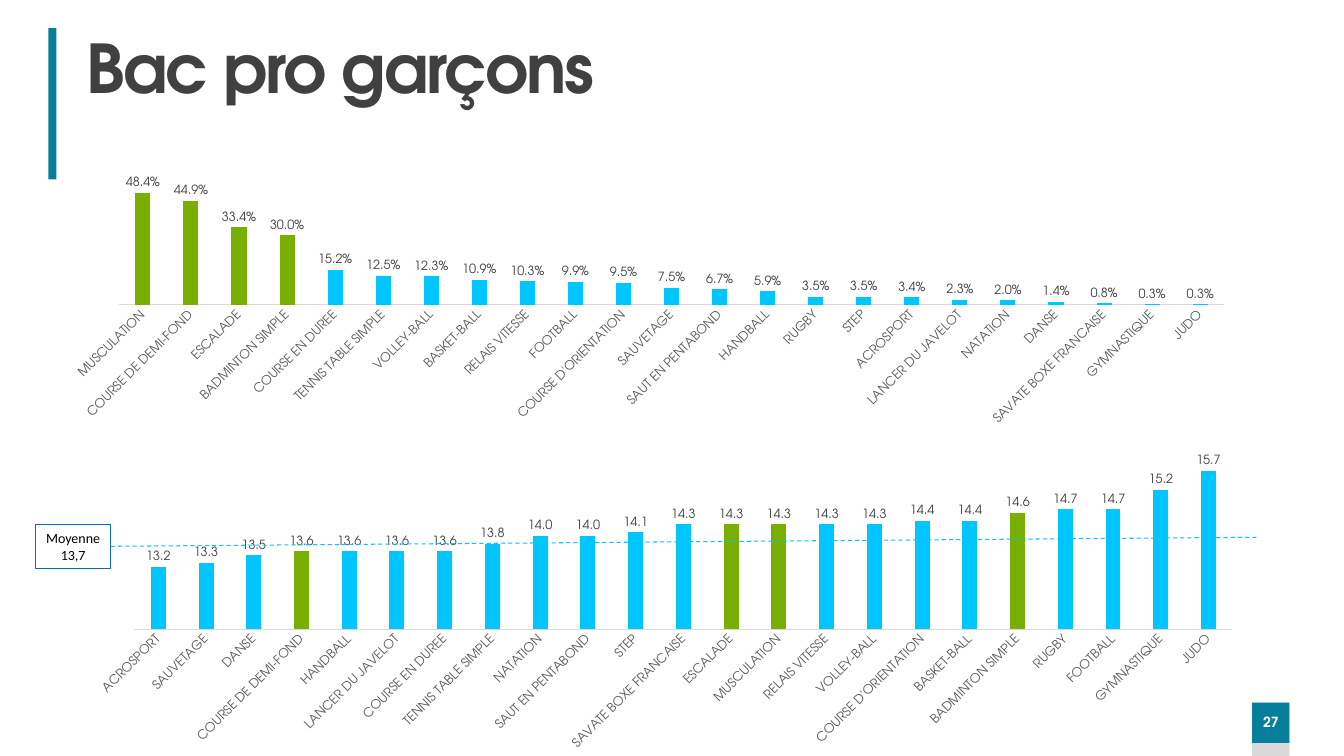
from lxml import etree
from pptx import Presentation
from pptx.chart.data import CategoryChartData
from pptx.dml.color import RGBColor
from pptx.enum.chart import XL_CHART_TYPE, XL_LABEL_POSITION, XL_TICK_MARK
from pptx.enum.dml import MSO_LINE
from pptx.enum.shapes import MSO_CONNECTOR, MSO_SHAPE
from pptx.enum.text import MSO_ANCHOR, PP_ALIGN
from pptx.oxml import parse_xml
from pptx.oxml.ns import nsdecls, qn
from pptx.util import Inches, Pt

COLUMN = XL_CHART_TYPE.COLUMN_CLUSTERED
OUTSIDE = XL_LABEL_POSITION.OUTSIDE_END
NO_TICK = XL_TICK_MARK.NONE
DASH = MSO_LINE.DASH
STRAIGHT = MSO_CONNECTOR.STRAIGHT
RECT = MSO_SHAPE.RECTANGLE
MIDDLE = MSO_ANCHOR.MIDDLE
LEFT, CENTER = PP_ALIGN.LEFT, PP_ALIGN.CENTER

# Content
TITLE = "Bac pro garçons"
PAGE = "27"
MEAN = "Moyenne 13,7"
SHARES = [
    ("MUSCULATION", 0.484), ("COURSE DE DEMI-FOND", 0.449),
    ("ESCALADE", 0.334), ("BADMINTON SIMPLE", 0.3),
    ("COURSE EN DUREE", 0.152), ("TENNIS TABLE SIMPLE", 0.125),
    ("VOLLEY-BALL", 0.123), ("BASKET-BALL", 0.109),
    ("RELAIS VITESSE", 0.103), ("FOOTBALL", 0.099),
    ("COURSE D'ORIENTATION", 0.095), ("SAUVETAGE", 0.075),
    ("SAUT EN PENTABOND", 0.067), ("HANDBALL", 0.059),
    ("RUGBY", 0.035), ("STEP", 0.035), ("ACROSPORT", 0.034),
    ("LANCER DU JAVELOT", 0.023), ("NATATION", 0.02), ("DANSE", 0.014),
    ("SAVATE BOXE FRANCAISE", 0.008), ("GYMNASTIQUE", 0.003),
    ("JUDO", 0.003),
]
MARKS = [
    ("ACROSPORT", 13.2), ("SAUVETAGE", 13.3), ("DANSE", 13.5),
    ("COURSE DE DEMI-FOND", 13.6), ("HANDBALL", 13.6),
    ("LANCER DU JAVELOT", 13.6), ("COURSE EN DUREE", 13.6),
    ("TENNIS TABLE SIMPLE", 13.8), ("NATATION", 14.0),
    ("SAUT EN PENTABOND", 14.0), ("STEP", 14.1),
    ("SAVATE BOXE FRANCAISE", 14.3), ("ESCALADE", 14.3),
    ("MUSCULATION", 14.3), ("RELAIS VITESSE", 14.3),
    ("VOLLEY-BALL", 14.3), ("COURSE D'ORIENTATION", 14.4),
    ("BASKET-BALL", 14.4), ("BADMINTON SIMPLE", 14.6), ("RUGBY", 14.7),
    ("FOOTBALL", 14.7), ("GYMNASTIQUE", 15.2), ("JUDO", 15.7),
]
# The four most chosen sports stand out in both charts
TOP = {name for name, share in SHARES[:4]}
# Chart top, data, number format, axis range, plot area (x, y, w, h) in percent
CHARTS = [
    (4.5, MARKS, "0.0", (11.58, 16), (4.9, 1.8, 93, 56.3)),
    (1.49, SHARES, "0.0%", (0, 0.6), (3.3, 5.1, 93.9, 46.1)),
]
COLORS = {
    "teal": "067F9C", "grey": "D9D9D9", "dark": "404040", "mid": "595959",
    "sky": "01C6FD", "green": "79AE02", "blue": "0070C0",
    "white": "FFFFFF", "black": "000000",
}
FACE = "TeX Gyre Adventor"


def color(name):
    return RGBColor.from_string(COLORS[name])


def style(font, tint, **values):
    for key, value in values.items():
        setattr(font, key, value)
    font.color.rgb = color(tint)


def paint(fill, tint):
    fill.solid()
    fill.fore_color.rgb = color(tint)


def add_box(place, fill=None, line=None):
    box = slide.shapes.add_shape(RECT, *map(Inches, place))
    box.shadow.inherit = False
    if fill:
        paint(box.fill, fill)
    else:
        box.fill.background()
    if line:
        box.line.color.rgb = color(line)
        box.line.width = Pt(0.75)
    else:
        box.line.fill.background()
    return box


def write(shape, text, align, tint, **values):
    frame = shape.text_frame
    frame.word_wrap = True
    frame.vertical_anchor = MIDDLE
    para = frame.paragraphs[0]
    para.alignment = align
    run = para.add_run()
    run.text = text
    style(run.font, tint, **values)
    return para


def set_plot(chart, plot):
    area = chart.plots[0]._element.getparent()
    for old in area.findall(qn("c:layout")):
        area.remove(old)
    layout = parse_xml(f"<c:layout {nsdecls('c')}><c:manualLayout/></c:layout>")
    pairs = [("layoutTarget", "inner"), ("xMode", "edge"), ("yMode", "edge")]
    pairs += [(tag, round(part / 100, 3)) for tag, part in zip("xywh", plot)]
    for tag, value in pairs:
        etree.SubElement(layout[0], qn("c:" + tag)).set("val", str(value))
    area.insert(0, layout)


def add_bars(top, rows, form, span, plot):
    data = CategoryChartData(number_format=form)
    data.categories = [name for name, value in rows]
    data.add_series("Series 1", [value for name, value in rows])
    place = map(Inches, (0.76, top, 11.71, 3))
    chart = slide.shapes.add_chart(COLUMN, *place, data).chart
    chart.has_title = chart.has_legend = False
    style(chart.font, "black", size=Pt(10), name=FACE)
    set_plot(chart, plot)

    # Axes
    scale = chart.value_axis
    scale.minimum_scale, scale.maximum_scale = span
    scale.has_major_gridlines = False
    scale.visible = False
    axis = chart.category_axis
    axis.major_tick_mark = axis.minor_tick_mark = NO_TICK
    axis.format.line.color.rgb = color("grey")
    axis.format.line.width = Pt(0.75)
    style(axis.tick_labels.font, "mid", size=Pt(9), name=FACE)
    axis._element.find(".//" + qn("a:bodyPr")).set("rot", "-2700000")

    # Bars and labels
    bars = chart.plots[0]
    bars.vary_by_categories = False
    bars.gap_width, bars.overlap = 219, -27
    series = bars.series[0]
    paint(series.format.fill, "sky")
    for i, (name, value) in enumerate(rows):
        if name in TOP:
            paint(series.points[i].format.fill, "green")
    labels = series.data_labels
    labels.show_value = True
    labels.position = OUTSIDE
    labels.number_format = form
    labels.number_format_is_linked = False
    style(labels.font, "dark", size=Pt(9), name=FACE)


prs = Presentation()
prs.slide_width, prs.slide_height = Inches(13.33), Inches(7.5)
slide = prs.slides.add_slide(prs.slide_layouts[5])
paint(slide.background.fill, "white")

# Side bar and page number
add_box((0.48, 0.28, 0.08, 1.5), "teal")
add_box((12.42, 6.97, 0.37, 0.53), "grey")
badge = add_box((12.42, 6.97, 0.37, 0.4), "teal")
badge.text_frame.margin_left = badge.text_frame.margin_right = 0
number = write(badge, PAGE, CENTER, "white", size=Pt(10), name=FACE, bold=True)
number.line_spacing = 0.9

# Title
title = slide.shapes.title
title.left, title.top = Inches(0.76), Inches(0.31)
title.width, title.height = Inches(12.24), Inches(0.8)
para = write(title, TITLE, LEFT, "dark", size=Pt(48), name=FACE, bold=True)
para.line_spacing = 0.9
para.runs[0].font._element.set("spc", "-150")

# Charts
for item in CHARTS:
    add_bars(*item)

# Mean box and line
mean = add_box((0.35, 5.2, 0.75, 0.44), line="blue")
write(mean, MEAN, CENTER, "black", size=Pt(10), name="Calibri")
ends = map(Inches, (1.1, 5.42, 12.47, 5.33))
rule = slide.shapes.add_connector(STRAIGHT, *ends)
rule.begin_connect(mean, 3)
rule.line.color.rgb = color("sky")
rule.line.width = Pt(0.75)
rule.line.dash_style = DASH
etree.SubElement(rule._element.spPr, qn("a:effectLst"))

prs.save("out.pptx")
